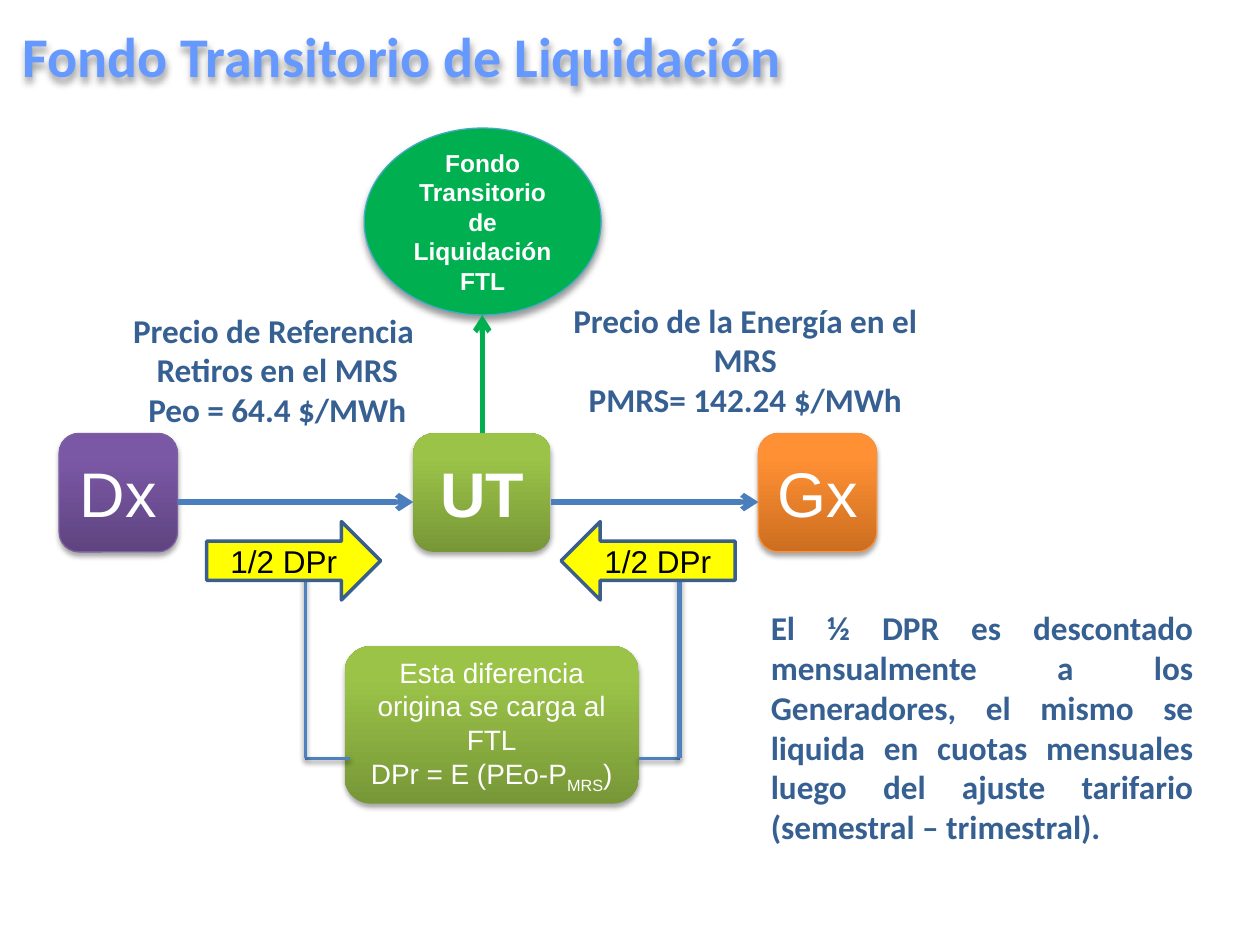
from lxml import etree
from pptx import Presentation
from pptx import util as u
from pptx.dml import color
from pptx.enum import shapes, text
from pptx.oxml import ns

Pt = u.Pt
MSO = shapes.MSO_SHAPE
AL = text.PP_ALIGN
ANC = text.MSO_ANCHOR

GREEN = ("779737", "9BC348")
BLUE = "4B7EBC"
STEEL = "4F81BD"
SOFT = (35, 3.1, 1.8)
THIN = (38, 3.1, 1.6)
DEEP = (40, 4, 3)


def rgb(code):
    return color.RGBColor.from_string(code)


def put(obj, vals):
    for key, val in vals.items():
        setattr(obj, key, val)


def sub(parent, tag, **vals):
    node = etree.SubElement(parent, ns.qn("a:" + tag))
    for key, val in vals.items():
        node.set(key, str(val))
    return node


class Deck:
    head = dict(name="Calibri", size=Pt(32), bold=True)
    note = dict(name="Calibri", size=Pt(19), bold=True)
    big = dict(name="Arial", size=Pt(36), bold=False)
    bold = dict(name="Arial", size=Pt(36), bold=True)
    body = dict(name="Arial", size=Pt(16), bold=False)
    fund = dict(name="Arial", size=Pt(14), bold=True)
    half = dict(name="Arial", size=Pt(18), bold=False)

    def __init__(self):
        self.prs = Presentation()
        put(self.prs, dict(slide_width=Pt(720), slide_height=Pt(540)))
        self.slide = self.prs.slides.add_slide(self.prs.slide_layouts[5])

    def shade(self, item, look):
        prop = item._element.spPr
        for old in prop.findall(ns.qn("a:effectLst")):
            prop.remove(old)
        fx = sub(prop, "effectLst")
        if look:
            alpha, blur, dist = look
            cast = sub(fx, "outerShdw", blurRad=Pt(blur), dist=Pt(dist),
                       dir=5400000, rotWithShape=0)
            sub(sub(cast, "srgbClr", val="000000"), "alpha", val=alpha * 1000)

    def words(self, item, lines, font, ink, align, anchor):
        frame = item.text_frame
        put(frame, dict(word_wrap=True, auto_size=text.MSO_AUTO_SIZE.NONE,
                        vertical_anchor=anchor))
        for i, line in enumerate(lines):
            para = frame.add_paragraph() if i else frame.paragraphs[0]
            para.alignment = align
            for part in [line] if isinstance(line, str) else line:
                run = para.add_run()
                low = part.startswith("_")
                run.text = part.lstrip("_")
                put(run.font, font)
                run.font.color.rgb = rgb(ink)
                if low:
                    run.font._element.set("baseline", "-25000")

    def title(self, box, line, ink):
        item = self.slide.shapes.title
        put(item, dict(zip(("left", "top", "width", "height"), map(Pt, box))))
        self.words(item, [line], self.head, ink, AL.LEFT, ANC.MIDDLE)
        self.shade(item, DEEP)

    def label(self, box, lines, align=AL.CENTER):
        item = self.slide.shapes.add_textbox(*map(Pt, box))
        self.words(item, lines, self.note, "376092", align, ANC.TOP)

    def shape(self, kind, box, lines, font, fill, edge=None, wide=0.75,
              ink="FFFFFF", look=None):
        item = self.slide.shapes.add_shape(kind, *map(Pt, box))
        item.shadow.inherit = False
        if isinstance(fill, tuple):
            item.fill.gradient()
            item.fill.gradient_angle = 90
            for stop, tone, pos in zip(item.fill.gradient_stops, fill, (0, 0.8)):
                stop.color.rgb = rgb(tone)
                stop.position = pos
        else:
            item.fill.solid()
            item.fill.fore_color.rgb = rgb(fill)
        if edge:
            item.line.color.rgb = rgb(edge)
            item.line.width = Pt(wide)
        else:
            item.line.fill.background()
        self.shade(item, look)
        self.words(item, lines, font, ink, AL.CENTER, ANC.MIDDLE)

    def line(self, start, end, ink, wide=3, tip=True, look=None):
        item = self.slide.shapes.add_connector(
            shapes.MSO_CONNECTOR.STRAIGHT, *map(Pt, start + end))
        item.line.color.rgb = rgb(ink)
        item.line.width = Pt(wide)
        if tip:
            sub(item.line._get_or_add_ln(), "tailEnd", type="arrow")
        self.shade(item, look)


def main():
    deck = Deck()
    deck.title((5.8, 11.5, 551.5, 39.6), "Fondo Transitorio de Liquidación",
               "6699FF")

    top, side = 247.7, 67.7
    nodes = [
        ("Dx", 33.8, side, deck.big, ("5F4480", "7B58A6"), "7D60A0"),
        ("Gx", 433.4, side, deck.big, ("CC6E20", "FF9034"), "F69240"),
        ("UT", 236.2, 78.5, deck.bold, GREEN, None),
    ]
    for name, left, width, font, fill, edge in nodes:
        deck.shape(MSO.ROUNDED_RECTANGLE, (left, top, width, side), [name],
                   font, fill, edge, look=SOFT)

    for start, end in ((101.5, 236.2), (314.7, 433.4)):
        deck.line((start, 286.9), (end, 286.9), BLUE)
    deck.label((65.5, 173.5, 185.8, 76.3),
               ["Precio de Referencia ", "Retiros en el MRS",
                "Peo = 64.4 $/MWh"])
    deck.label((310.3, 167.8, 231.1, 76.3),
               ["Precio de la Energía en el MRS", "PMRS= 142.24 $/MWh"])

    deck.shape(MSO.ROUNDED_RECTANGLE, (196.9, 369.2, 168.2, 90),
               ["Esta diferencia origina se carga al FTL",
                ("DPr = E (PEo-P", "_MRS", ")")],
               deck.body, GREEN, look=SOFT)
    base = 433.4
    for inner, outer, wide, look in ((200.2, 174.5, 2, THIN),
                                     (365.1, 388.3, 3, SOFT)):
        deck.line((inner, base), (outer, base), STEEL, 2, False, THIN)
        deck.line((outer, base), (outer, 309), STEEL, wide, True, look)

    deck.shape(MSO.OVAL, (208.1, 73.2, 135.4, 106.8),
               ["Fondo Transitorio de Liquidación FTL"], deck.fund,
               "00B050", "46AAC5", look=DEEP)
    deck.line((275.6, top), (275.6, 180), "00B050")

    for kind, left in ((MSO.RIGHT_ARROW, 118.1), (MSO.LEFT_ARROW, 320.6)):
        deck.shape(kind, (left, 298.1, 99.4, 44.8), ["1/2 DPr"], deck.half,
                   "FFFF00", "3A5F8C", 2, "000000")

    deck.label((433.4, 343.4, 255.6, 145.4),
               ["El ½ DPR es descontado mensualmente a los Generadores, "
                "el mismo se liquida en cuotas mensuales luego del ajuste "
                "tarifario (semestral – trimestral)."], AL.JUSTIFY)
    deck.prs.save("out.pptx")


if __name__ == "__main__":
    main()
